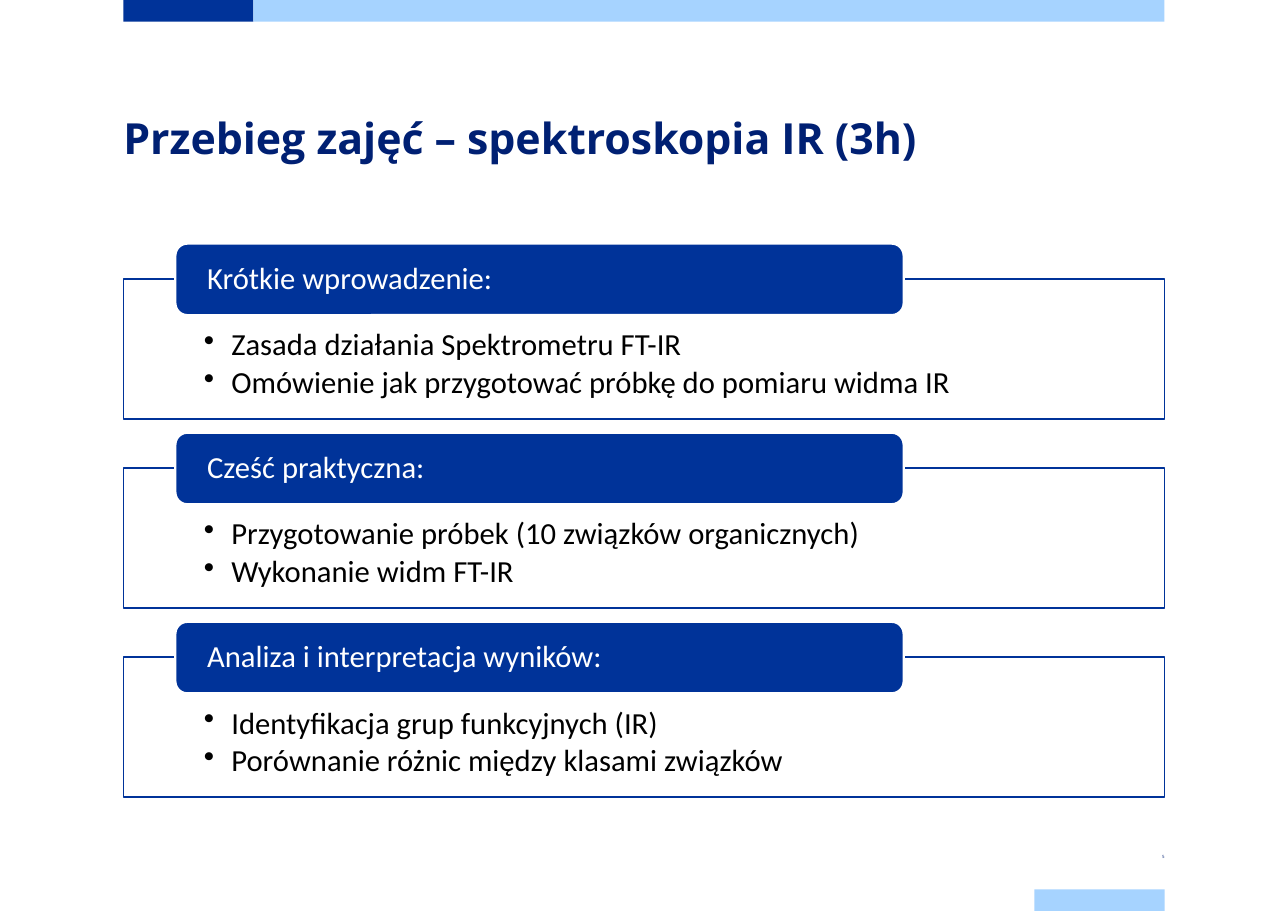
from dataclasses import dataclass

import pptx
import pptx.dml.color
import pptx.enum.shapes
import pptx.enum.text
import pptx.util
from lxml import etree

Pt = pptx.util.Pt
RGB = pptx.dml.color.RGBColor.from_string
Shape = pptx.enum.shapes.MSO_SHAPE
Anchor = pptx.enum.text.MSO_ANCHOR
Align = pptx.enum.text.PP_ALIGN


@dataclass(frozen=True)
class Theme:
    navy = RGB("002073")
    blue = RGB("003399")
    sky = RGB("A6D3FF")
    white = RGB("FFFFFF")
    black = RGB("000000")
    heading_font = "Open Sans"
    body_font = "Calibri"
    title_size = Pt(28)
    body_size = Pt(20)
    number_size = Pt(2.8)


theme = Theme()

PAGE_WIDTH, PAGE_HEIGHT = 841.68, 595.44
LEFT, WIDTH = 80.6, 680.4
BAR_WIDTH, BAR_HEIGHT = 85, 14.2
RIGHT_BAR = LEFT + WIDTH - BAR_WIDTH
FIRST_PANEL, PANEL_HEIGHT, PANEL_STEP = 182.2, 91.6, 123.6
TAB_LEFT, TAB_RISE, TAB_WIDTH, TAB_HEIGHT = 114.6, 23, 476, 46.8
BULLET_INDENT = 18

sections = [
    ("Krótkie wprowadzenie:",
     ["Zasada działania Spektrometru FT-IR",
      "Omówienie jak przygotować próbkę do pomiaru widma IR"]),
    ("Cześć praktyczna:",
     ["Przygotowanie próbek (10 związków organicznych)",
      "Wykonanie widm FT-IR"]),
    ("Analiza i interpretacja wyników:",
     ["Identyfikacja grup funkcyjnych (IR)",
      "Porównanie różnic między klasami związków"]),
]

deck = pptx.Presentation()
deck.slide_width, deck.slide_height = Pt(PAGE_WIDTH), Pt(PAGE_HEIGHT)
page = deck.slides.add_slide(deck.slide_layouts[5])


def add_block(kind, left, top, width, height, fill, line=None, weight=1):
    block = page.shapes.add_shape(kind, Pt(left), Pt(top), Pt(width), Pt(height))
    block.shadow.inherit = False
    block.fill.solid()
    block.fill.fore_color.rgb = fill
    if line is None:
        block.line.fill.background()
    else:
        block.line.color.rgb = line
        block.line.width = Pt(weight)
    return block


def set_frame(box, anchor, left, top, right, bottom):
    """Set the anchor and the insets, and return the text frame."""
    frame = box.text_frame
    frame.word_wrap = True
    frame.vertical_anchor = anchor
    frame.margin_left, frame.margin_top = Pt(left), Pt(top)
    frame.margin_right, frame.margin_bottom = Pt(right), Pt(bottom)
    return frame


# Page bars
for left, top, width, fill in [
    (LEFT, 0, BAR_WIDTH, theme.blue),
    (LEFT + BAR_WIDTH, 0, WIDTH - BAR_WIDTH, theme.sky),
    (RIGHT_BAR, PAGE_HEIGHT - BAR_HEIGHT, BAR_WIDTH, theme.sky),
]:
    add_block(Shape.RECTANGLE, left, top, width, BAR_HEIGHT, fill)

# Title
title = page.shapes.title
title.left, title.top, title.width, title.height = Pt(LEFT), Pt(70.6), Pt(WIDTH), Pt(85)
frame = set_frame(title, Anchor.TOP, 0, 0, 0, 0)
frame.auto_size = pptx.enum.text.MSO_AUTO_SIZE.NONE
para = frame.paragraphs[0]
para.text = "Przebieg zajęć – spektroskopia IR (3h)"
para.alignment = Align.LEFT
para.line_spacing = Pt(36)
para.font.name, para.font.size = theme.heading_font, theme.title_size
para.font.bold = True
para.font.color.rgb = theme.navy

# Sections: an outlined panel with a tab over its top edge
for index, (heading, points) in enumerate(sections):
    top = FIRST_PANEL + index * PANEL_STEP
    panel = add_block(Shape.RECTANGLE, LEFT, top, WIDTH, PANEL_HEIGHT,
                      theme.white, theme.blue)
    frame = set_frame(panel, Anchor.TOP, 52.6, 33.1, 52.6, 11.5)
    for number, point in enumerate(points):
        para = frame.add_paragraph() if number else frame.paragraphs[0]
        para.text = point
        para.alignment = Align.LEFT
        para.line_spacing = 0.9
        para.space_after = Pt(3)
        properties = para._p.get_or_add_pPr()
        properties.set("marL", str(Pt(BULLET_INDENT)))
        properties.set("indent", str(-Pt(BULLET_INDENT)))
        bullet = etree.SubElement(properties, pptx.oxml.ns.qn("a:buChar"))
        bullet.set("char", "•")
        para.font.name, para.font.size = theme.body_font, theme.body_size
        para.font.color.rgb = theme.black

    tab = add_block(Shape.ROUNDED_RECTANGLE, TAB_LEFT, top - TAB_RISE,
                    TAB_WIDTH, TAB_HEIGHT, theme.blue, theme.white, 1.5)
    para = set_frame(tab, Anchor.MIDDLE, 18.5, 0, 18.5, 0).paragraphs[0]
    para.text = heading
    para.alignment = Align.LEFT
    para.line_spacing = 0.9
    para.font.name, para.font.size = theme.body_font, theme.body_size
    para.font.color.rgb = theme.white

# Page number
box = page.shapes.add_textbox(Pt(RIGHT_BAR), Pt(553), Pt(BAR_WIDTH), Pt(BAR_HEIGHT))
para = set_frame(box, Anchor.MIDDLE, 0, 5.8, 0, 5.8).paragraphs[0]
para.text = "5"
para.alignment = Align.RIGHT
para.line_spacing = 0.7
para.font.name, para.font.size = theme.heading_font, theme.number_size
para.font.color.rgb = theme.navy

deck.save("out.pptx")
